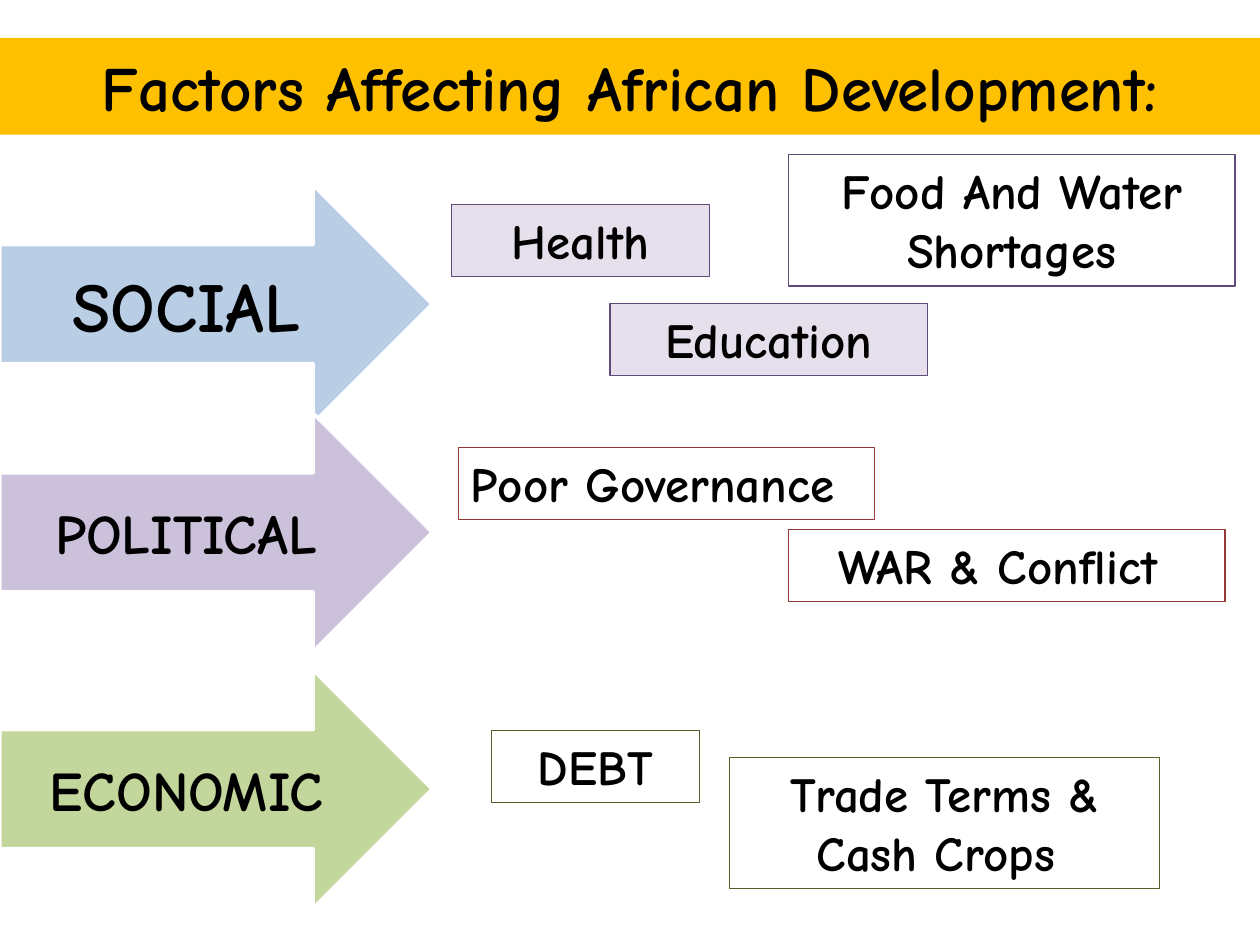
"""Build a slide on the factors affecting African development."""
from pptx import Presentation
from pptx.dml.color import RGBColor
from pptx.enum import shapes, text
from pptx.util import Pt

BLACK = RGBColor(0x00, 0x00, 0x00)
WHITE = RGBColor(0xFF, 0xFF, 0xFF)
GOLD = RGBColor(0xFF, 0xC0, 0x00)
BLUE = RGBColor(0xB9, 0xCD, 0xE5)
LILAC = RGBColor(0xCC, 0xC1, 0xDA)
GREEN = RGBColor(0xC3, 0xD6, 0x9B)
PALE = RGBColor(0xE6, 0xE0, 0xEC)
PURPLE = RGBColor(0x60, 0x4A, 0x7B)
RED = RGBColor(0x95, 0x37, 0x35)
OLIVE = RGBColor(0x4F, 0x62, 0x28)

FONT = "Comic Neue"
RECT = shapes.MSO_SHAPE.RECTANGLE
ARROW = shapes.MSO_SHAPE.RIGHT_ARROW
LEFT, MID = text.PP_ALIGN.LEFT, text.PP_ALIGN.CENTER
TOP, HALF = text.MSO_ANCHOR.TOP, text.MSO_ANCHOR.MIDDLE

deck = Presentation()
deck.slide_width, deck.slide_height = Pt(720), Pt(540)
slide = deck.slides.add_slide(deck.slide_layouts[6])


def add(kind, box, words, size, fill, edge, width, side=MID, anchor=HALF):
    item = slide.shapes.add_shape(kind, *map(Pt, box))
    item.shadow.inherit = False
    if fill is None:
        item.fill.background()
    else:
        item.fill.solid()
        item.fill.fore_color.rgb = fill
    if edge is None:
        item.line.fill.background()
    else:
        item.line.color.rgb = edge
        item.line.width = Pt(width)
    frame = item.text_frame
    frame.word_wrap = True
    frame.vertical_anchor = anchor
    frame.text = words
    para = frame.paragraphs[0]
    para.alignment = side
    font = para.runs[0].font
    font.name, font.size, font.bold = FONT, Pt(size), True
    font.color.rgb = BLACK


add(RECT, (0, 21.6, 720, 55.4), "Factors Affecting African Development:",
    36, GOLD, None, 0)

for words, top, size, fill in (
    ("SOCIAL", 105.8, 40, BLUE),
    ("POLITICAL", 236.2, 32, LILAC),
    ("ECONOMIC", 383, 32, GREEN),
):
    add(ARROW, (0, top, 247, 136), words, size, fill, WHITE, 2)

ONE, TWO = 41.2, 75.1
for words, left, top, wide, high, fill, edge, side in (
    ("Health", 257.8, 116.8, 147.6, ONE, PALE, PURPLE, MID),
    ("Education", 348.6, 173.4, 181.4, ONE, PALE, PURPLE, MID),
    ("Food And Water Shortages", 450.4, 88.4, 255.4, TWO, None, PURPLE, MID),
    ("Poor Governance", 262, 255.6, 237.8, ONE, None, RED, LEFT),
    ("WAR & Conflict ", 450.4, 302.6, 249.6, ONE, None, RED, MID),
    ("DEBT", 280.8, 417.4, 118.8, ONE, None, OLIVE, MID),
    ("Trade Terms & Cash Crops ", 416.8, 432.8, 246, TWO, None, OLIVE, MID),
):
    add(RECT, (left, top, wide, high), words, 28, fill, edge, 0.75, side, TOP)

deck.save("out.pptx")
